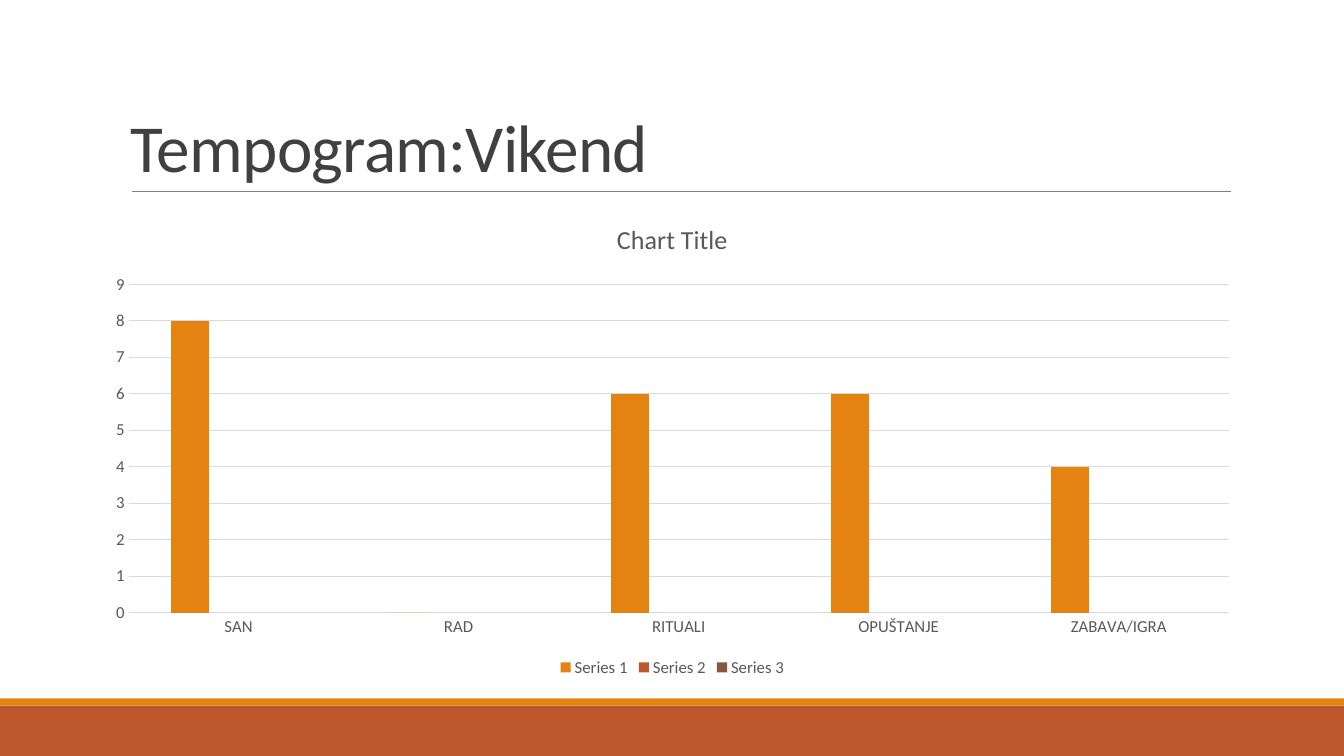
from pptx import Presentation
from pptx.chart.data import CategoryChartData
from pptx.dml.color import RGBColor
from pptx.enum.chart import XL_CHART_TYPE, XL_LEGEND_POSITION, XL_TICK_MARK
from pptx.enum.shapes import MSO_CONNECTOR, MSO_SHAPE
from pptx.enum.text import MSO_ANCHOR
from pptx.oxml.ns import qn
from pptx.util import Cm, Pt

ORANGE = RGBColor(0xE4, 0x83, 0x12)
RUST = RGBColor(0xBD, 0x58, 0x2C)
BROWN = RGBColor(0x86, 0x56, 0x40)
TITLE_GRAY = RGBColor(0x40, 0x40, 0x40)
CHART_GRAY = RGBColor(0x59, 0x59, 0x59)
RULE_GRAY = RGBColor(0x80, 0x80, 0x80)
GRID_GRAY = RGBColor(0xD9, 0xD9, 0xD9)
FONT = "Calibri"
PAGE_WIDTH = Cm(33.87)

CATEGORIES = ["SAN", "RAD", "RITUALI", "OPUŠTANJE", "ZABAVA/IGRA"]
SERIES = [
    ("Series 1", [8, 0, 6, 6, 4], ORANGE),
    ("Series 2", [None] * len(CATEGORIES), RUST),
    ("Series 3", [None] * len(CATEGORIES), BROWN),
]


def style_font(font, size, color):
    """Set the typeface, size and colour of a font."""
    font.name = FONT
    font.size = Pt(size)
    font.bold = False
    font.color.rgb = color


def style_line(line, color, width):
    """Set the colour and width of a line."""
    line.color.rgb = color
    line.width = Pt(width)


def write_text(frame, text, size, color, line_spacing=None, tracking=None):
    """Write one formatted paragraph into a text frame."""
    para = frame.paragraphs[0]
    span = para.add_run()
    span.text = text
    style_font(span.font, size, color)
    if line_spacing is not None:
        para.line_spacing = line_spacing
    if tracking is not None:
        span.font._element.set("spc", str(round(tracking * 100)))


def add_band(page, top, height, color):
    """Add a plain band across the full page width."""
    band = page.shapes.add_shape(MSO_SHAPE.RECTANGLE, 0, top, PAGE_WIDTH, height)
    band.shadow.inherit = False
    band.fill.solid()
    band.fill.fore_color.rgb = color
    band.line.fill.background()


def add_rule(page, left, right, top):
    """Add a thin horizontal rule without a shadow."""
    rule = page.shapes.add_connector(MSO_CONNECTOR.STRAIGHT, left, top, right, top)
    style_line(rule.line, RULE_GRAY, 0.5)
    properties = rule._element.spPr
    properties.append(properties.makeelement(qn("a:effectLst"), {}))


def add_title(page, text):
    """Add the page title, standing on the rule."""
    box = page.shapes.add_textbox(Cm(3.05), Cm(0.79), Cm(27.94), Cm(4.04))
    frame = box.text_frame
    frame.word_wrap = True
    frame.vertical_anchor = MSO_ANCHOR.BOTTOM
    write_text(frame, text, size=48, color=TITLE_GRAY, line_spacing=0.85, tracking=-0.5)


def style_axis(axis):
    """Remove tick marks and set the label font of an axis."""
    axis.major_tick_mark = XL_TICK_MARK.NONE
    axis.minor_tick_mark = XL_TICK_MARK.NONE
    style_font(axis.tick_labels.font, 12, CHART_GRAY)


def add_column_chart(page, title):
    """Add the clustered column chart of weekend hours."""
    data = CategoryChartData()
    data.categories = CATEGORIES
    for name, values, _ in SERIES:
        data.add_series(name, values)
    chart = page.shapes.add_chart(
        XL_CHART_TYPE.COLUMN_CLUSTERED, Cm(2.34), Cm(5.08), Cm(29.21), Cm(12.09), data
    ).chart
    style_font(chart.font, 12, CHART_GRAY)

    chart.has_title = True
    write_text(chart.chart_title.text_frame, title, size=18.6, color=CHART_GRAY)
    chart.chart_title.include_in_layout = False

    chart.has_legend = True
    chart.legend.position = XL_LEGEND_POSITION.BOTTOM
    chart.legend.include_in_layout = False
    style_font(chart.legend.font, 12, CHART_GRAY)

    style_axis(chart.category_axis)
    style_line(chart.category_axis.format.line, GRID_GRAY, 0.75)
    style_axis(chart.value_axis)
    chart.value_axis.format.line.fill.background()
    style_line(chart.value_axis.major_gridlines.format.line, GRID_GRAY, 0.75)

    plot = chart.plots[0]
    plot.vary_by_categories = False
    plot.gap_width = 219
    plot.overlap = -27
    for series, (_, _, color) in zip(plot.series, SERIES):
        series.invert_if_negative = False
        series.format.fill.solid()
        series.format.fill.fore_color.rgb = color


def main():
    """Build the slide and save it."""
    deck = Presentation()
    deck.slide_width = PAGE_WIDTH
    deck.slide_height = Cm(19.05)
    page = deck.slides.add_slide(deck.slide_layouts[6])
    add_band(page, Cm(17.78), Cm(1.27), RUST)
    add_band(page, Cm(17.6), Cm(0.18), ORANGE)
    add_rule(page, Cm(3.33), Cm(31.01), Cm(4.83))
    add_title(page, "Tempogram:Vikend")
    add_column_chart(page, "Chart Title")
    deck.save("out.pptx")


if __name__ == "__main__":
    main()
